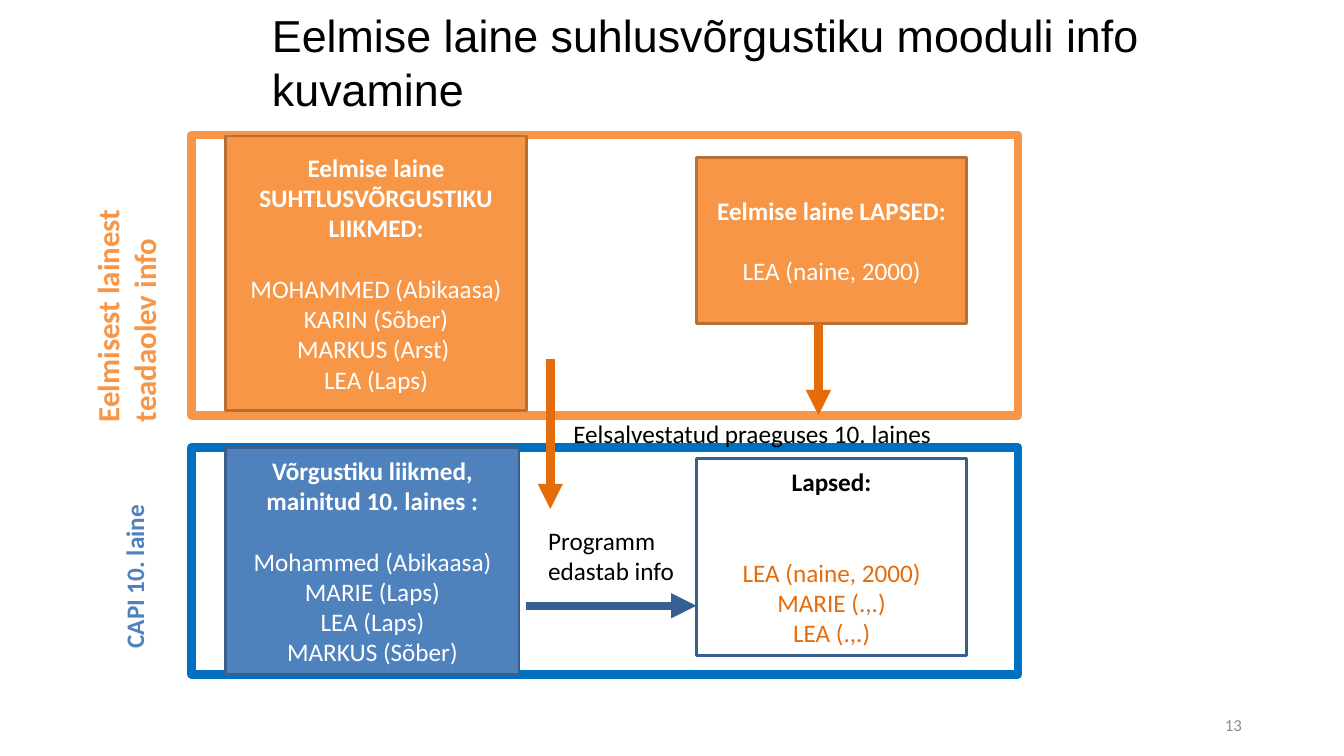
from lxml import etree
from pptx import Presentation
from pptx.dml.color import RGBColor
from pptx.enum.shapes import MSO_CONNECTOR, MSO_SHAPE
from pptx.enum.text import MSO_ANCHOR as ANCHOR, PP_ALIGN as ALIGN
from pptx.oxml.ns import qn
from pptx.util import Pt

BLACK = RGBColor(0x00, 0x00, 0x00)
WHITE = RGBColor(0xFF, 0xFF, 0xFF)
GREY = RGBColor(0x8C, 0x8C, 0x8C)
ORANGE = RGBColor(0xF7, 0x96, 0x46)
ORANGE_EDGE = RGBColor(0xB7, 0x6F, 0x34)
ORANGE_DARK = RGBColor(0xE4, 0x6C, 0x0A)
BLUE = RGBColor(0x4F, 0x81, 0xBD)
BLUE_EDGE = RGBColor(0x3A, 0x5F, 0x8C)
BLUE_DARK = RGBColor(0x37, 0x60, 0x92)
BLUE_FRAME = RGBColor(0x00, 0x70, 0xC0)

LINE_HEIGHT = 21.6

deck = Presentation()
deck.slide_width, deck.slide_height = Pt(960), Pt(540)
page = deck.slides.add_slide(deck.slide_layouts[6])


def add_box(place, fill, edge, edge_width):
    box = page.shapes.add_shape(MSO_SHAPE.RECTANGLE, *map(Pt, place))
    box.shadow.inherit = False
    if fill is None:
        box.fill.background()
    else:
        box.fill.solid()
        box.fill.fore_color.rgb = fill
    box.line.color.rgb = edge
    box.line.width = Pt(edge_width)
    return box


def add_label(place, text, size, color, bold=False, font="Calibri",
              anchor=ANCHOR.MIDDLE, align=ALIGN.LEFT, rotation=0):
    box = page.shapes.add_textbox(*map(Pt, place))
    box.rotation = rotation
    frame = box.text_frame
    frame.text = text
    frame.word_wrap = True
    frame.vertical_anchor = anchor
    for para in frame.paragraphs:
        para.alignment = align
        for span in para.runs:
            span.font.name = font
            span.font.size = Pt(size)
            span.font.bold = bold
            span.font.color.rgb = color


# Title and page number
add_label((187.2, 2.2, 751.7, 85), "Eelmise laine suhlusvõrgustiku mooduli info kuvamine",
          32, BLACK, font="Arial", anchor=ANCHOR.TOP)
add_label((678.2, 503.3, 216, 28.8), "13", 12, GREY, align=ALIGN.RIGHT)

# Frames of the two waves
add_box((136.8, 96.5, 590.4, 200.2), WHITE, ORANGE, 6)
add_box((136.8, 319.7, 590.4, 162), WHITE, BLUE_FRAME, 6)

# Boxes: place, fill, edge, heading, heading colour, list colour, lines of gap, list
boxes = [
    ((161.3, 97.2, 214.6, 195.8), ORANGE, ORANGE_EDGE,
     "Eelmise laine SUHTLUSVÕRGUSTIKU LIIKMED:", WHITE, WHITE, 1,
     ["MOHAMMED (Abikaasa)", "KARIN (Sõber)", "MARKUS (Arst) ", "LEA (Laps)"]),
    ((161.3, 319.7, 209.5, 162), BLUE, BLUE_EDGE,
     "Võrgustiku liikmed, mainitud 10. laines :", WHITE, WHITE, 1,
     ["Mohammed (Abikaasa)", "MARIE (Laps)", "LEA (Laps)", "MARKUS (Sõber)"]),
    ((497.5, 112.3, 193, 118.8), ORANGE, ORANGE_EDGE,
     "Eelmise laine LAPSED:", WHITE, WHITE, 1, ["LEA (naine, 2000)"]),
    ((497.5, 327.6, 193, 140.4), None, BLUE_EDGE,
     "Lapsed:", BLACK, ORANGE_DARK, 2, ["LEA (naine, 2000)", "MARIE (.,.)", "LEA (.,.)"]),
]
for place, fill, edge, heading, heading_color, list_color, gap, members in boxes:
    frame = add_box(place, fill, edge, 2).text_frame
    frame.text = "\n".join([heading] + members)
    frame.word_wrap = True
    frame.vertical_anchor = ANCHOR.MIDDLE
    for index, para in enumerate(frame.paragraphs):
        para.alignment = ALIGN.CENTER
        if index == 1:
            para.space_before = Pt(gap * LINE_HEIGHT)
        font = para.runs[0].font
        font.name = "Calibri"
        font.size = Pt(18)
        font.bold = index == 0
        font.color.rgb = list_color if index else heading_color

# Arrows
arrows = [
    ((393.1, 256.3, 393.1, 363.6), ORANGE_DARK),
    ((584.6, 231.1, 584.6, 296.6), ORANGE_DARK),
    ((375.8, 432.7, 497.5, 432.7), BLUE_DARK),
]
for ends, color in arrows:
    arrow = page.shapes.add_connector(MSO_CONNECTOR.STRAIGHT, *map(Pt, ends))
    arrow.line.color.rgb = color
    arrow.line.width = Pt(6)
    line = arrow._element.spPr.find(qn("a:ln"))
    etree.SubElement(line, qn("a:tailEnd"), type="triangle")
    etree.SubElement(arrow._element.spPr, qn("a:effectLst"))

# Notes beside the arrows
add_label((402.5, 291.6, 280, 35.3), "Eelsalvestatud praeguses 10. laines", 18, BLACK)
add_label((384.5, 371.5, 122.4, 51.1), "Programm edastab info", 18, BLACK, anchor=ANCHOR.TOP)

# Rotated names of the waves
add_label((2.1, 185, 175, 72), "Eelmisest lainest\nteadaolev info", 22, ORANGE,
          bold=True, rotation=270)
add_label((30.8, 369.2, 130, 72), "CAPI 10. laine", 18, BLUE, bold=True, rotation=270)

deck.save("out.pptx")
